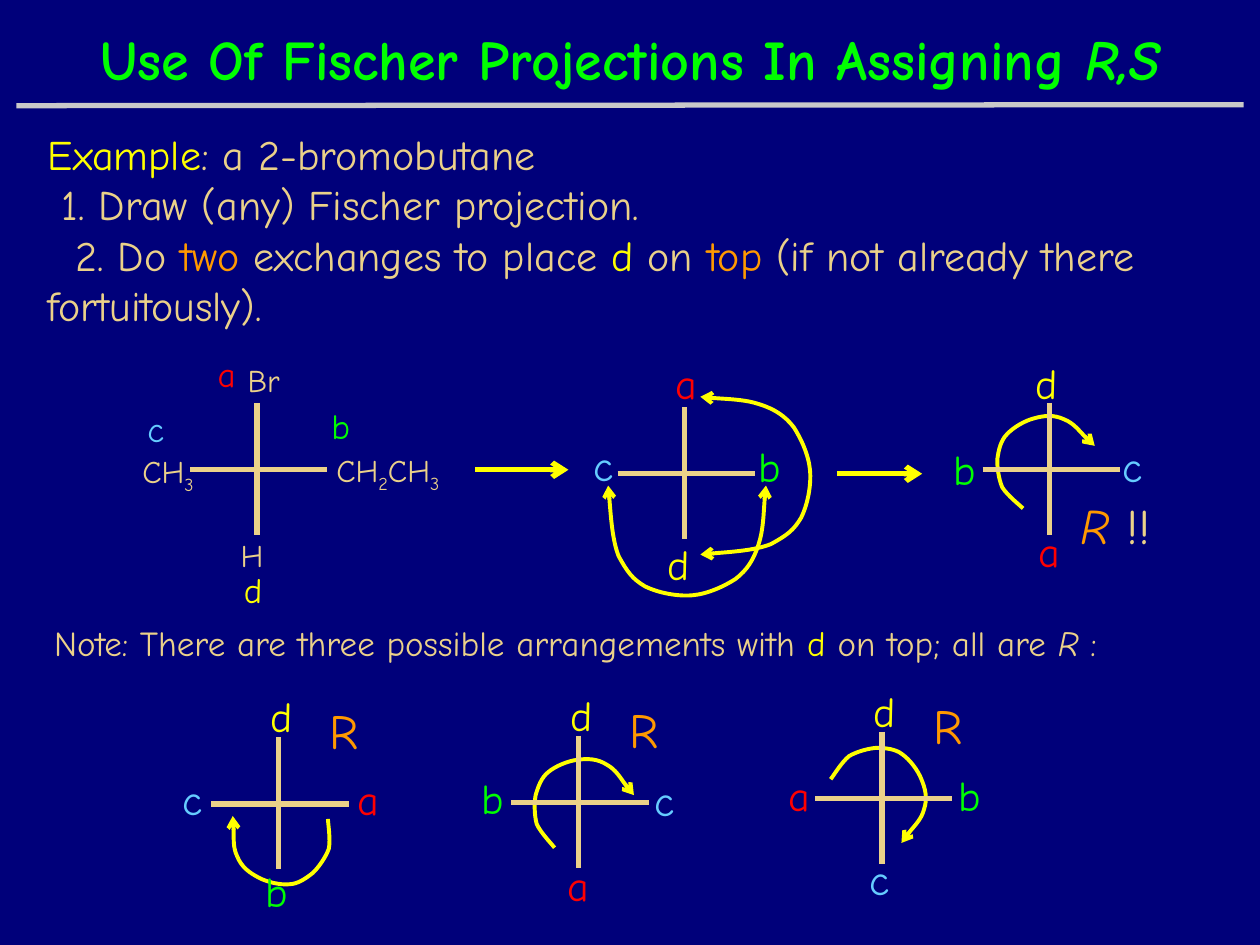
"""Build a slide on assigning R,S with Fischer projections."""
from itertools import groupby

from lxml import etree
from pptx import Presentation
from pptx.dml.color import RGBColor
from pptx.enum.shapes import MSO_CONNECTOR
from pptx.enum.text import MSO_ANCHOR, MSO_AUTO_SIZE, PP_ALIGN
from pptx.oxml.ns import qn
from pptx.util import Cm, Pt

STRAIGHT = MSO_CONNECTOR.STRAIGHT
LEFT, CENTER, RIGHT = PP_ALIGN.LEFT, PP_ALIGN.CENTER, PP_ALIGN.RIGHT
MIDDLE = MSO_ANCHOR.MIDDLE
FIXED = MSO_AUTO_SIZE.NONE
FONT = "Comic Neue"

COLOURS = {
    "background": "00007A", "text": "EBD189", "rule": "C9C9C9",
    "title": "00FF00", "yellow": "FFFF00", "orange": "FF9900",
    "a": "FF0000", "b": "00FF00", "c": "66CCFF", "d": "FFFF00", "R": "FF9900",
}
LABEL_HEIGHTS = {18: 1.02, 20: 1.09, 24: 1.27, 28: 1.44}

EXAMPLE = [
    (0, [("Example", "yellow"), (": a 2-bromobutane", "text")]),
    (0.28, [("1. Draw (any) Fischer projection.", "text")]),
    (0.56, [("2. Do ", "text"), ("two", "orange"), (" exchanges to place ", "text"),
            ("d", "d"), (" on ", "text"), ("top ", "orange"),
            ("(if not already there fortuitously).", "text")]),
]
NOTE = [("Note: There are three possible arrangements with ", "text"), ("d ", "d"),
        ("on top; all are ", "text"), ("R ", "text", True), (":", "text")]

CROSSES = [(5.18, 9.47), (13.8, 9.55), (21.16, 9.47),
           (5.61, 16.21), (11.66, 16.18), (17.78, 16.1)]
GROUPS = [("Br", 4.67, 7.16, 1.22, RIGHT), ("CH3", 2.62, 8.99, 1.98, LEFT),
          ("CH2CH3", 6.53, 8.97, 3.43, LEFT), ("H", 4.6, 10.69, 1.3, LEFT)]
PRIORITIES = {
    20: [("a", 4.14, 6.99, 2.72), ("b", 6.43, 8.03, 1.98),
         ("c", 2.72, 8.1, 1.98), ("d", 4.32, 11.33, 1.22)],
    24: [("a", 13.36, 7.09, 2.72), ("b", 15.04, 8.76, 1.98),
         ("c", 11.71, 8.74, 1.98), ("d", 12.93, 10.74, 1.22),
         ("a", 20.68, 10.46, 1.35), ("b", 18.97, 8.81, 1.98),
         ("c", 22.38, 8.76, 1.98), ("d", 20.35, 7.09, 1.22),
         ("a", 6.96, 15.47, 1.14), ("b", 5.11, 17.32, 1.02),
         ("c", 3.43, 15.47, 1.98), ("d", 4.93, 13.79, 1.22),
         ("a", 11.2, 17.2, 2.72), ("b", 9.45, 15.44, 1.98),
         ("c", 12.95, 15.49, 1.09), ("d", 10.97, 13.77, 1.22),
         ("a", 15.65, 15.39, 1.14), ("b", 19.08, 15.39, 1.02),
         ("c", 17.27, 17.09, 1.98), ("d", 17.09, 13.69, 1.22)],
    28: [("R", 6.4, 14, 1.78), ("R", 12.45, 13.97, 1.78), ("R", 18.57, 13.89, 1.78)],
}

TURN = [(0.41, 1.8), (0.36, 1.73), (0.13, 1.5), (0.05, 1.32), (0, 1.14), (0, 0.89),
        (0.03, 0.74), (0.08, 0.56), (0.15, 0.38), (0.28, 0.28), (0.43, 0.15),
        (0.69, 0.05), (0.86, 0.03), (1.07, 0), (1.27, 0), (1.47, 0.13),
        (1.65, 0.23), (1.88, 0.61), (2.01, 0.74)]
EXCHANGE = [(0, 0), (0.2, 0.03), (0.89, 0.05), (1.19, 0.15), (1.5, 0.25), (1.7, 0.38),
            (1.88, 0.61), (2.03, 0.84), (2.18, 1.17), (2.21, 1.47), (2.24, 1.78),
            (2.16, 2.18), (2.03, 2.44), (1.88, 2.69), (1.75, 2.79), (1.42, 2.97),
            (1.09, 3.1), (0.3, 3.15), (0, 3.18)]
TURN_PLACES = [(4.6, 16, 215.3), (20.09, 8.38, 352.4),
               (10.77, 15.29, 0), (16.76, 15.16, 75.5)]
EXCHANGE_PLACES = [(14.12, 8, 0), (12.73, 9.32, 90)]


def colour(name):
    return RGBColor.from_string(COLOURS[name])


def place(shape, left, top, width, height):
    shape.left, shape.top = Cm(left), Cm(top)
    shape.width, shape.height = Cm(width), Cm(height)


def write(paragraph, runs, size, align=LEFT):
    """Fill a paragraph with (text, colour name[, italic]) runs."""
    paragraph.alignment = align
    paragraph.font.name, paragraph.font.size = FONT, Pt(size)
    for text, colour_name, *italic in runs:
        run = paragraph.add_run()
        run.text = text
        run.font.color.rgb = colour(colour_name)
        if italic:
            run.font.italic = True


def add_label(slide, runs, size, left, top, width, align=LEFT):
    box = slide.shapes.add_textbox(Cm(left), Cm(top), Cm(width), Cm(LABEL_HEIGHTS[size]))
    box.text_frame.word_wrap = True
    paragraph = box.text_frame.paragraphs[0]
    write(paragraph, runs, size, align)
    return paragraph


def add_formula(slide, formula, left, top, width, align):
    """Add a chemical group with its digits as subscripts."""
    parts = ["".join(part) for _, part in groupby(formula, str.isdigit)]
    runs = [(part, "text") for part in parts]
    for run in add_label(slide, runs, 18, left, top, width, align).runs:
        if run.text.isdigit():
            run.font._element.set("baseline", "-25000")


def style_line(shape, colour_name, width, ends=()):
    shape.line.color.rgb = colour(colour_name)
    shape.line.width = Pt(width)
    for end in ends:
        etree.SubElement(shape.line._get_or_add_ln(), qn(f"a:{end}"), type="arrow")


def add_line(slide, x1, y1, x2, y2, colour_name="text", ends=()):
    line = slide.shapes.add_connector(STRAIGHT, Cm(x1), Cm(y1), Cm(x2), Cm(y2))
    style_line(line, colour_name, 3, ends)
    etree.SubElement(line._element.spPr, qn("a:effectLst"))


def add_cross(slide, x, y):
    add_line(slide, x - 1.35, y, x + 1.42, y)
    add_line(slide, x, y - 1.35, x, y + 1.31)


def add_curve(slide, points, left, top, rotation, ends):
    """Draw a Bézier arrow from a start point and triples of curve points."""
    start, *rest = [(Cm(left + x), Cm(top + y)) for x, y in points]
    builder = slide.shapes.build_freeform(*start)
    builder.add_line_segments(rest, close=False)
    shape = builder.convert_to_shape()
    steps = list(shape._element.iter(qn("a:lnTo")))
    outline = steps[0].getparent()
    for first in range(0, len(steps), 3):
        curve = etree.SubElement(outline, qn("a:cubicBezTo"))
        for step in steps[first:first + 3]:
            curve.append(step[0])
            outline.remove(step)
    shape.rotation = rotation
    shape.shadow.inherit = False
    shape.fill.background()
    style_line(shape, "yellow", 2.25, ends)


def fill_title(title):
    place(title, 0.15, 0.08, 25.1, 2.18)
    title.text_frame.vertical_anchor = MIDDLE
    paragraph = title.text_frame.paragraphs[0]
    write(paragraph, [("Use Of Fischer Projections In Assigning ", "title"),
                      ("R,S", "title", True)], 32, CENTER)
    paragraph.font.bold = True


def fill_example(body):
    place(body, 0.71, 2.46, 23.98, 4.37)
    frame = body.text_frame
    frame.auto_size = FIXED
    for index, (indent, runs) in enumerate(EXAMPLE):
        paragraph = frame.add_paragraph() if index else frame.paragraphs[0]
        paragraph.space_before = Pt(0)
        properties = paragraph._p.get_or_add_pPr()
        properties.set("marL", "0")
        properties.set("indent", str(Cm(indent)))
        etree.SubElement(properties, qn("a:buNone"))
        write(paragraph, runs, 24)


def main():
    presentation = Presentation()
    presentation.slide_width, presentation.slide_height = Cm(25.4), Cm(19.05)
    slide = presentation.slides.add_slide(presentation.slide_layouts[1])
    slide.background.fill.solid()
    slide.background.fill.fore_color.rgb = colour("background")

    fill_title(slide.shapes.title)
    fill_example(slide.placeholders[1])
    add_line(slide, 0.33, 2.13, 25.07, 2.11, "rule")
    add_label(slide, NOTE, 20, 0.84, 12.4, 23.72)

    for left, top, rotation in TURN_PLACES:
        add_curve(slide, TURN, left, top, rotation, ["tailEnd"])
    for x, y in CROSSES:
        add_cross(slide, x, y)
    for group in GROUPS:
        add_formula(slide, *group)
    for size, labels in PRIORITIES.items():
        for letter, left, top, width in labels:
            align = RIGHT if letter == "d" else LEFT
            add_label(slide, [(letter, letter)], size, left, top, width, align)
    add_label(slide, [("R", "R", True), (" !!", "text")], 28, 21.54, 9.86, 2.59)

    for left, top, rotation in EXCHANGE_PLACES:
        add_curve(slide, EXCHANGE, left, top, rotation, ["headEnd", "tailEnd"])
    for start, end, y in [(9.58, 11.46, 9.47), (16.87, 18.59, 9.55)]:
        add_line(slide, start, y, end, y, "yellow", ["tailEnd"])
    presentation.save("out.pptx")


if __name__ == "__main__":
    main()
